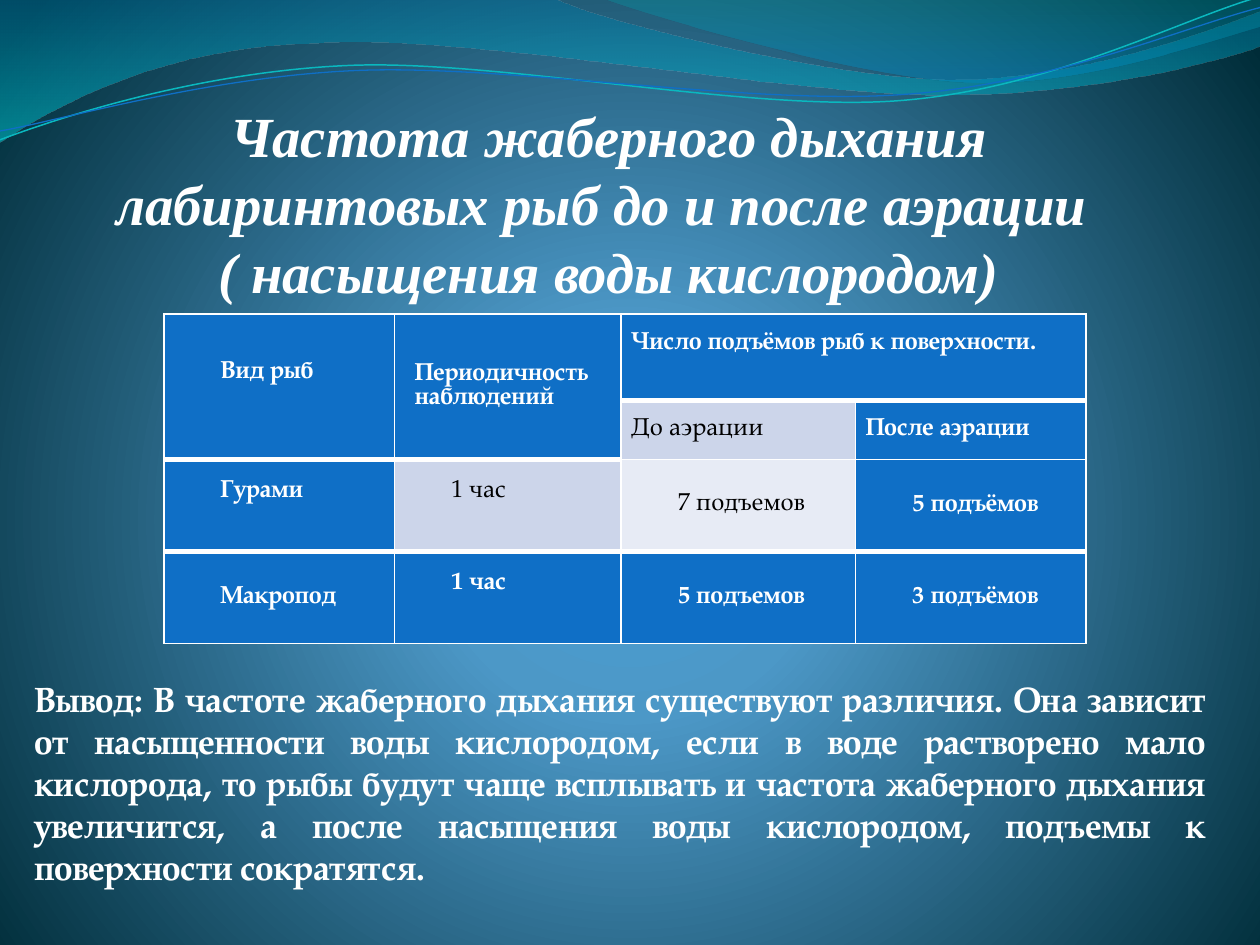
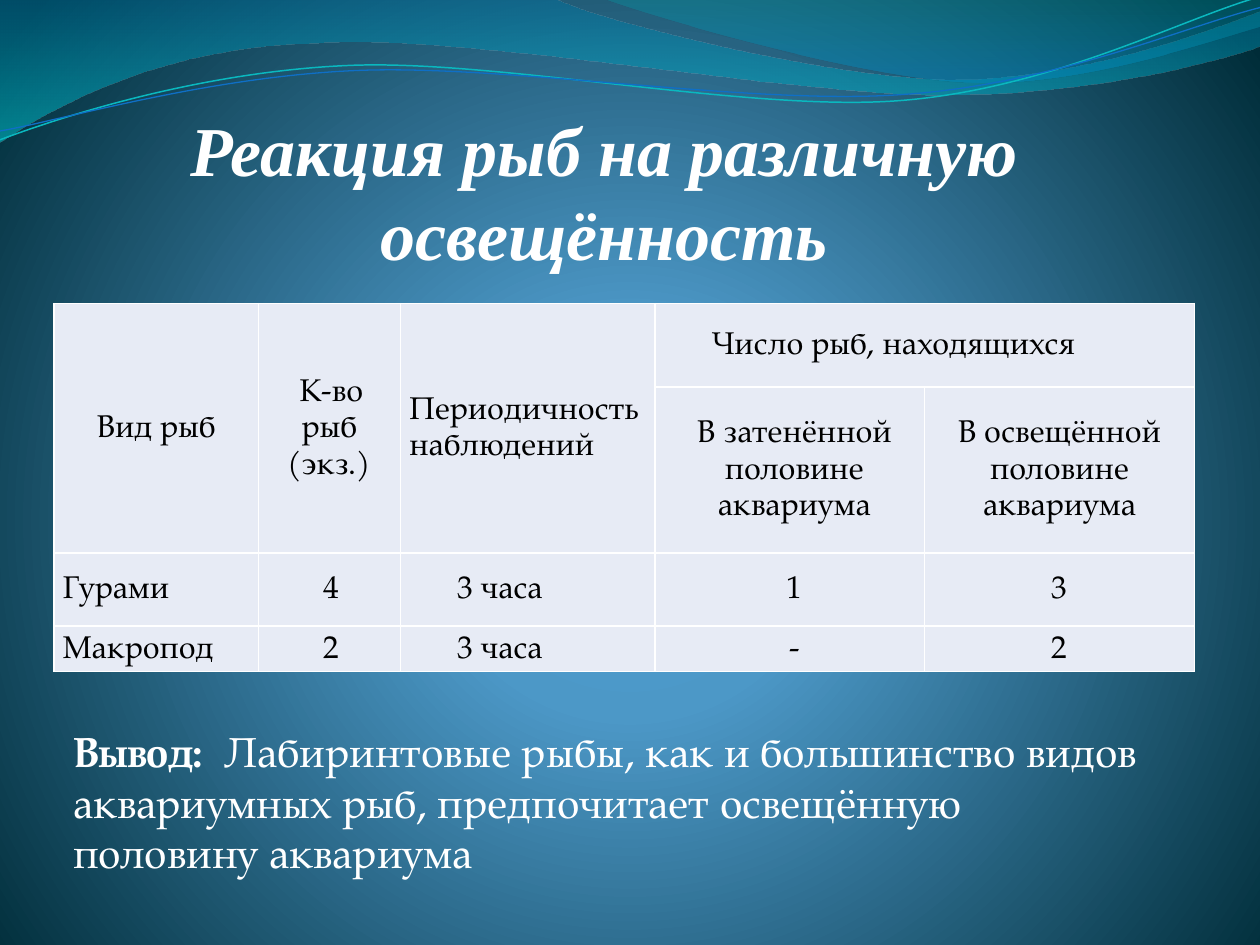
from pptx import Presentation
from pptx.dml.color import RGBColor
from pptx.enum.text import MSO_ANCHOR, PP_ALIGN
from pptx.oxml import parse_xml
from pptx.oxml.ns import nsdecls, qn
from pptx.util import Inches, Pt

LEFT, MID, JUST = PP_ALIGN.LEFT, PP_ALIGN.CENTER, PP_ALIGN.JUSTIFY
TOP, CENTRE, BOTTOM = MSO_ANCHOR.TOP, MSO_ANCHOR.MIDDLE, MSO_ANCHOR.BOTTOM

WHITE = RGBColor(0xFF, 0xFF, 0xFF)
BLACK = RGBColor(0x00, 0x00, 0x00)
BLUE = RGBColor(0x0F, 0x6F, 0xC6)
AQUA = RGBColor(0x0A, 0xB8, 0xBF)
LILAC = RGBColor(0xCC, 0xD5, 0xEA)
PALE = RGBColor(0xE7, 0xEB, 0xF5)
SKY = RGBColor(0x4A, 0xA0, 0xD6)
STEEL = RGBColor(0x4C, 0x98, 0xC7)
NIGHT = RGBColor(0x00, 0x2C, 0x38)
OCEAN = RGBColor(0x00, 0x74, 0xA1)
CYAN = RGBColor(0x00, 0xC6, 0xCF)
TEAL = RGBColor(0x00, 0xA1, 0xA9)
AZURE = RGBColor(0x00, 0x8B, 0xBF)

SERIF, BODY = "Times New Roman", "TeX Gyre Pagella"
DOWN = '<a:lin ang="5400000" scaled="1"/>'
ROUND = ('<a:path path="circle"><a:fillToRect l="10000" t="110000" '
         'r="10000" b="100000"/></a:path>')


def shade(props, stops, course):
    """Replace a solid fill by a gradient; stops are (place, colour, alpha)."""
    marks = "".join(
        f'<a:gs pos="{place * 1000}"><a:srgbClr val="{tone}">'
        f'<a:alpha val="{alpha * 1000}"/></a:srgbClr></a:gs>'
        for place, tone, alpha in stops)
    grad = parse_xml(f'<a:gradFill {nsdecls("a")} rotWithShape="1">'
                     f'<a:gsLst>{marks}</a:gsLst>{course}</a:gradFill>')
    props.replace(props.find(qn("a:solidFill")), grad)


def write(frame, text, size, font=BODY, color=WHITE, bold=False, italic=False,
          align=LEFT, indent=0, spacing=None, lead=""):
    """Fill a frame, one paragraph a line, after an optional bold lead."""
    frame.word_wrap = True
    frame.text = text
    if lead:
        first = frame.paragraphs[0]
        first.text = lead
        first.add_run().text = text
    for para in frame.paragraphs:
        para.alignment = align
        para.line_spacing = spacing
        if indent:
            para._p.get_or_add_pPr().set("indent", str(Inches(indent)))
        for num, run in enumerate(para.runs):
            run.font.size, run.font.name = Pt(size), font
            run.font.bold = bold or (bool(lead) and num == 0)
            run.font.italic = italic
            run.font.color.rgb = color


deck = Presentation()
deck.slide_width, deck.slide_height = Inches(10), Inches(7.5)

# Shared background
master = deck.slide_master
master.background.fill.solid()
shade(master.element.find(".//" + qn("p:bgPr")),
      [(0, SKY, 100), (25, STEEL, 100), (100, NIGHT, 100)], ROUND)

# Shared waves: start, then line ends (2 numbers) or curves (6 numbers)
waves = [
    dict(start=(0, 0), stops=[(0, OCEAN, 45), (100, CYAN, 55)], steps=[
        (4.4, -0.01), (4.76, 0.17, 6.64, 0.63, 7.58, 0.63),
        (8.53, 0.63, 9.58, 0.26, 10, 0.09), (10.01, 0.36),
        (9.83, 0.44, 8.7, 0.76, 7.46, 0.75),
        (6.22, 0.75, 3.82, 0.28, 2.57, 0.34),
        (1.29, 0.36, 0.46, 0.83, -0.01, 1.13)]),
    dict(start=(4.79, -0.01), stops=[(0, TEAL, 30), (80, AZURE, 45)], steps=[
        (5.09, 0.11, 6.82, 0.62, 7.69, 0.65),
        (8.56, 0.69, 9.61, 0.32, 10, 0.21), (10, 0)]),
    dict(start=(0, 1.11), line=(AQUA, 0.85), steps=[
        (0.48, 0.93, 1.58, 0.57, 2.77, 0.52),
        (3.95, 0.47, 5.93, 0.89, 7.13, 0.8),
        (8.33, 0.71, 9.38, 0.15, 9.98, -0.02)]),
    dict(start=(0, 1.04), line=(BLUE, 0.75), steps=[
        (0.47, 0.96, 1.64, 0.61, 2.83, 0.56),
        (4.03, 0.51, 5.97, 0.84, 7.17, 0.75),
        (8.36, 0.67, 9.41, 0.21, 10, 0.06)]),
]

# Table cells: text, first-line indent, fill, alignment; None is merged away
gills = dict(
    at=(1.3, 2.49), size=14, spacing=None,
    cols=[1.83, 1.8, 1.86, 1.83], rows=[0.69, 0.44, 0.73, 0.73],
    spans=[(0, 0, 1, 0), (0, 1, 1, 1), (0, 2, 0, 3)],
    thick={(0, 0), (0, 1), (0, 2), (0, 3), (1, 0), (1, 1),
           (2, 0), (2, 1), (2, 2), (2, 3)},
    raised={(0, 0), (0, 2), (2, 0), (2, 1), (3, 1)},
    cells=[
        [("Вид рыб", 0.38, BLUE, JUST),
         ("Периодичность\nнаблюдений", 0.09, BLUE, JUST),
         ("Число подъёмов рыб к поверхности.", 0.01, BLUE, JUST), None],
        [None, None, ("До аэрации", 0.01, LILAC, JUST),
         ("После аэрации", 0.01, BLUE, JUST)],
        [("Гурами", 0.38, BLUE, JUST), ("1 час", 0.38, LILAC, JUST),
         ("7 подъемов", 0.38, PALE, JUST), ("5 подъёмов", 0.38, BLUE, JUST)],
        [("Макропод", 0.38, BLUE, JUST), ("1 час", 0.38, BLUE, JUST),
         ("5 подъемов", 0.38, BLUE, JUST), ("3 подъёмов", 0.38, BLUE, JUST)],
    ])
light = dict(
    at=(0.43, 2.41), size=18, spacing=1.15,
    cols=[1.62, 1.13, 2.02, 2.14, 2.14], rows=[0.66, 1.32, 0.58, 0.36],
    spans=[(0, 0, 1, 0), (0, 1, 1, 1), (0, 2, 1, 2), (0, 3, 0, 4)],
    thick=set(), raised=set(),
    cells=[
        [("Вид рыб", 0, PALE, MID), ("К-во рыб (экз.)", 0.03, PALE, MID),
         ("Периодичность\nнаблюдений", 0, PALE, JUST),
         ("Число рыб, находящихся", 0.38, PALE, JUST), None],
        [None, None, None,
         ("В затенённой\nполовине\nаквариума", 0.07, PALE, MID),
         ("В освещённой\nполовине\nаквариума", 0, PALE, MID)],
    ] + [
        [(fish, 0, PALE, JUST), (count, 0.03, PALE, MID),
         ("3 часа", 0.38, PALE, JUST), (dark, 0.07, PALE, MID),
         (lit, 0, PALE, MID)]
        for fish, count, dark, lit in [("Гурами", "4", "1", "3"),
                                       ("Макропод", "2", "-", "2")]
    ])

pages = [
    dict(title="Частота жаберного дыхания лабиринтовых рыб до и после "
               "аэрации \v( насыщения воды кислородом)",
         head=(0.51, 0.92, 8.66, 1.5), size=32.4, table=gills,
         foot=(0.27, 5.33, 9.32, 1.9),
         note=dict(text="Вывод: В частоте жаберного дыхания существуют "
                        "различия. Она зависит от насыщенности воды "
                        "кислородом, если в воде растворено мало кислорода, "
                        "то рыбы будут чаще всплывать и частота жаберного "
                        "дыхания увеличится, а после насыщения воды "
                        "кислородом, подъемы к поверхности сократятся.",
                   size=20, bold=True, align=JUST)),
    dict(title="Реакция рыб на различную освещённость",
         head=(0.51, 0.68, 8.59, 1.5), size=40, table=light,
         foot=(0.58, 5.71, 8.59, 1.4),
         note=dict(lead="Вывод: ",
                   text=" Лабиринтовые рыбы, как и большинство видов "
                        "аквариумных рыб, предпочитает освещённую половину "
                        "аквариума",
                   size=24)),
]

for page in pages:
    slide = deck.slides.add_slide(deck.slide_layouts[6])

    # Waves: a straight outline, then three points fold into each curve
    for wave in waves:
        dots = [step[i:i + 2] for step in wave["steps"]
                for i in range(0, len(step), 2)]
        pen = slide.shapes.build_freeform(*map(Inches, wave["start"]))
        pen.add_line_segments([(Inches(x), Inches(y)) for x, y in dots],
                              close="stops" in wave)
        shape = pen.convert_to_shape()
        ends = iter(list(shape.element.iter(qn("a:lnTo"))))
        for step in wave["steps"]:
            end = next(ends)
            if len(step) == 6:
                end.tag = qn("a:cubicBezTo")
                for more in (next(ends), next(ends)):
                    end.append(more[0])
                    more.getparent().remove(more)
        shape.shadow.inherit = False
        if "stops" in wave:
            shape.fill.solid()
            shade(shape.element.spPr, wave["stops"], DOWN)
            shape.line.fill.background()
        else:
            shape.fill.background()
            tone, width = wave["line"]
            shape.line.color.rgb, shape.line.width = tone, Pt(width)

    # Title and conclusion
    title = dict(text=page["title"], size=page["size"], font=SERIF,
                 bold=True, italic=True, align=MID)
    for place, style, anchor, pad in [(page["head"], title, BOTTOM, 0),
                                      (page["foot"], page["note"], TOP, 0.05)]:
        frame = slide.shapes.add_textbox(*map(Inches, place)).text_frame
        frame.margin_left, frame.margin_right = 0, Inches(0.02)
        frame.margin_top = frame.margin_bottom = Inches(pad)
        frame.vertical_anchor = anchor
        write(frame, **style)

    # Table
    plan = page["table"]
    cols, rows, thick = plan["cols"], plan["rows"], plan["thick"]
    size = (sum(cols), sum(rows))
    table = slide.shapes.add_table(
        len(rows), len(cols), *map(Inches, plan["at"] + size)).table
    table.first_row = table.horz_banding = False
    for col, width in zip(table.columns, cols):
        col.width = Inches(width)
    for row, height in zip(table.rows, rows):
        row.height = Inches(height)
    for r1, c1, r2, c2 in plan["spans"]:
        table.cell(r1, c1).merge(table.cell(r2, c2))

    for r, line in enumerate(plan["cells"]):
        for c, item in enumerate(line):
            cell = table.cell(r, c)
            cell.margin_left = cell.margin_right = Inches(0.07)
            cell.margin_top = cell.margin_bottom = 0
            cell.vertical_anchor = CENTRE
            if item:
                text, indent, fill, align = item
                cell.fill.solid()
                cell.fill.fore_color.rgb = fill
                strong = fill == BLUE
                write(cell.text_frame, text, plan["size"], bold=strong,
                      color=WHITE if strong else BLACK, align=align,
                      indent=indent, spacing=plan["spacing"])
            if (r, c) in plan["raised"]:
                cell.margin_bottom = Inches(0.22)
            # Borders
            over = 3 if (r - 1, c) in thick else 1
            under = 3 if (r, c) in thick else 1
            props = cell._tc.get_or_add_tcPr()
            for i, (side, width) in enumerate(zip("LRTB", (1, 1, over, under))):
                props.insert(i, parse_xml(
                    f'<a:ln{side} {nsdecls("a")} w="{Pt(width)}"><a:solidFill>'
                    f'<a:srgbClr val="{WHITE}"/></a:solidFill></a:ln{side}>'))

deck.save("out.pptx")
